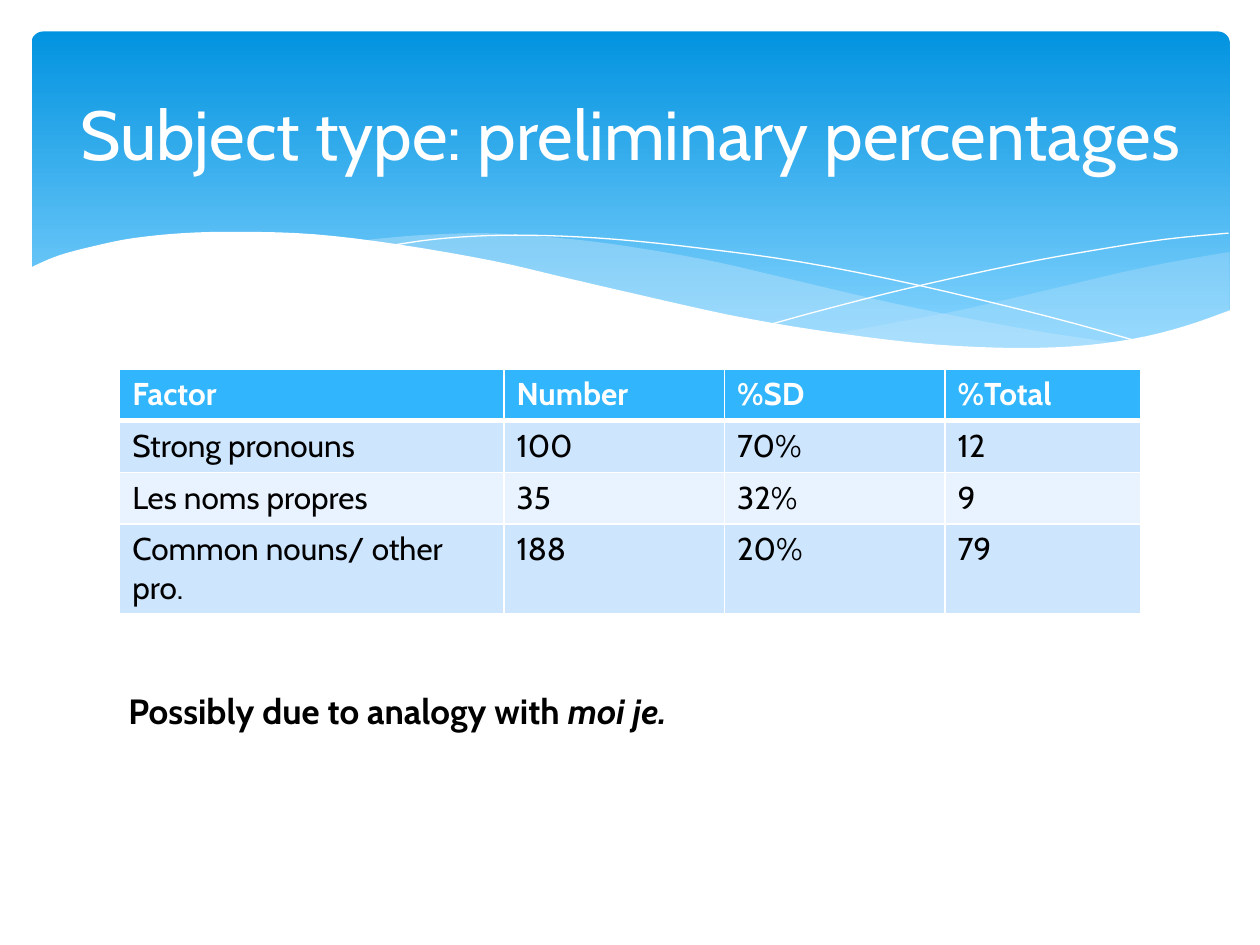
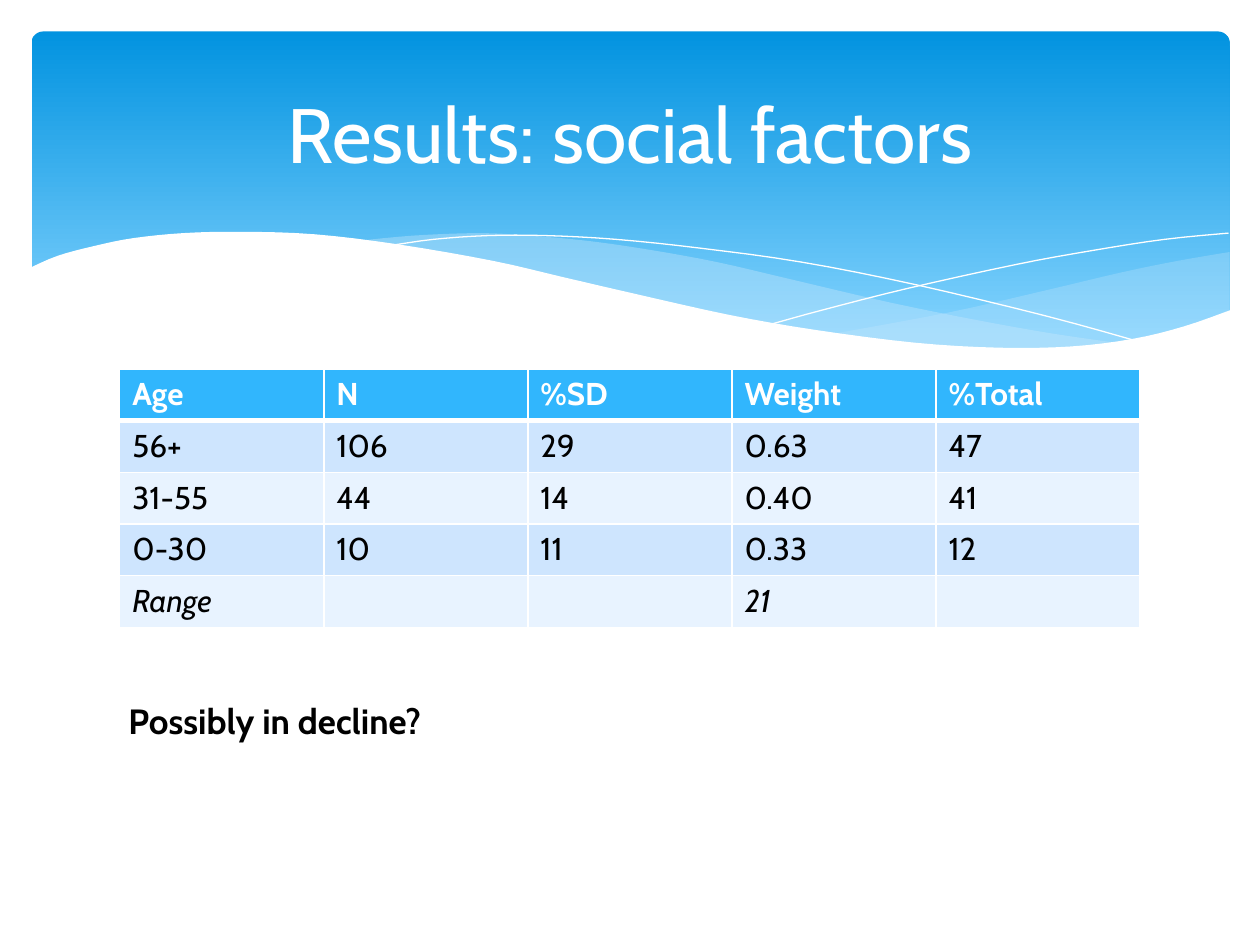
"""Build two result slides with a shared wave band, a title, a table and a remark."""

from dataclasses import dataclass

from lxml.etree import SubElement
from pptx import Presentation
from pptx.dml.color import RGBColor
from pptx.enum.shapes import MSO_SHAPE as Preset
from pptx.enum.text import MSO_ANCHOR as Anchor, MSO_AUTO_SIZE as AutoSize, PP_ALIGN as Align
from pptx.oxml.ns import qn
from pptx.util import Inches, Pt

Point = tuple[float, float]

COLORS = {
    "white": "FFFFFF",
    "black": "000000",
    "band_top": "0293E0",
    "band_bottom": "83D3FE",
    "wave": "C6E7FC",
    "header": "31B6FD",
    "odd_row": "CEE5FE",
    "even_row": "E8F3FF",
}
FONT = "Cabin"
HEADER_FORMAT = {"name": FONT, "size": Pt(18), "bold": True}
CELL_FORMAT = {"name": FONT, "size": Pt(18), "bold": False}
REMARK_FORMAT = {"name": FONT, "size": Pt(20), "bold": True}
TITLE_FRAME = {"word_wrap": True, "auto_size": AutoSize.NONE, "vertical_anchor": Anchor.MIDDLE}
REMARK_FRAME = {"word_wrap": True, "auto_size": AutoSize.SHAPE_TO_FIT_TEXT}
ROW_HEIGHT = 0.41
CURVE_STEPS = 4


@dataclass(frozen=True)
class Wave:
    """A filled or outlined figure joined from smooth curves."""
    curves: list[list[Point]]
    fill: str | None = None
    opacity: int = 100


@dataclass(frozen=True)
class Remark:
    """The sentence below a table, given as (text, italic) runs."""
    runs: list[tuple[str, bool]]
    top: float
    width: float


@dataclass(frozen=True)
class ResultSlide:
    """The content of one slide."""
    title: str
    title_size: float
    column_widths: list[float]
    rows: list[list[str]]
    remark: Remark
    italic_last_row: bool = False


WAVES = [
    Wave([[(9.76, 2), (9.35, 2.07), (8.91, 2.16), (8.32, 2.3), (7.53, 2.48), (6.61, 2.65)],
          [(6.61, 2.65), (7.05, 2.71), (7.57, 2.76), (8.03, 2.78), (8.54, 2.76),
           (8.97, 2.7), (9.35, 2.62), (9.76, 2.47)]], "wave", 29),
    Wave([[(8.93, 2.73), (8.37, 2.65), (7.75, 2.54), (7.06, 2.4), (6.29, 2.22), (5.69, 2.08),
           (5.14, 1.98), (4.65, 1.91), (4.2, 1.87), (3.8, 1.85), (3.28, 1.87), (2.86, 1.91)],
          [(2.86, 1.91), (3.42, 1.99), (4.04, 2.11), (4.91, 2.32), (5.66, 2.48), (6.34, 2.61),
           (6.95, 2.7), (7.48, 2.76), (8.07, 2.78), (8.57, 2.77), (8.93, 2.73)]], "wave", 40),
    Wave([[(3.09, 1.95), (3.44, 1.9), (3.87, 1.87), (4.33, 1.87), (4.89, 1.9), (5.56, 1.97),
           (6.36, 2.08), (7.27, 2.26), (8.31, 2.51), (9.07, 2.72)]]),
    Wave([[(6.13, 2.57), (6.53, 2.46), (7.2, 2.29), (8.06, 2.1), (8.66, 1.99),
           (9.24, 1.9), (9.75, 1.85)]]),
    Wave([[(0.23, 2.13), (0.46, 2.03), (0.76, 1.95), (1.06, 1.89), (1.46, 1.85), (1.93, 1.84),
           (2.5, 1.86), (3.16, 1.94), (3.91, 2.07), (4.47, 2.2), (5.03, 2.33), (5.79, 2.5),
           (6.48, 2.62), (7.26, 2.72), (7.93, 2.76), (8.5, 2.75), (8.99, 2.69), (9.4, 2.59),
           (9.77, 2.46)],
          [(9.77, 3.29), (0.23, 3.29)]], "white"),
]

SLIDES = [
    ResultSlide(
        "Subject type: preliminary percentages", 39.6, [3.05, 1.75, 1.75, 1.55],
        [["Factor", "Number", "%SD", "%Total"],
         ["Strong pronouns", "100", "70%", "12"],
         ["Les noms propres", "35", "32%", "9"],
         ["Common nouns/ other pro.", "188", "20%", "79"]],
        Remark([("Possibly due to analogy with ", False), ("moi je.", True)], 5.42, 8)),
    ResultSlide(
        "Results: social factors", 44, [1.62] * 5,
        [["Age", "N", "%SD", "Weight", "%Total"],
         ["56+", "106", "29", "0.63", "47"],
         ["31-55", "44", "14", "0.40", "41"],
         ["0-30", "10", "11", "0.33", "12"],
         ["Range", "", "", "21", ""]],
        Remark([("Possibly in decline?", False)], 5.5, 8.25), italic_last_row=True),
]


def rgb(name: str) -> RGBColor:
    """Return a named colour."""
    return RGBColor.from_string(COLORS[name])


def apply_format(target, values: dict) -> None:
    """Set every attribute in a dict of format values."""
    for name, value in values.items():
        setattr(target, name, value)


def add_run(paragraph, text: str, color: str, values: dict) -> None:
    """Add a formatted run to a paragraph."""
    run = paragraph.add_run()
    run.text = text
    apply_format(run.font, values)
    run.font.color.rgb = rgb(color)


def smooth(anchors: list[Point]) -> list[Point]:
    """Return points on a Catmull-Rom curve through the anchors."""
    if len(anchors) < 3:
        return anchors
    padded = [anchors[0], *anchors, anchors[-1]]
    points = [anchors[0]]
    for a, b, c, d in zip(padded, padded[1:], padded[2:], padded[3:]):
        for step in range(1, CURVE_STEPS + 1):
            t = step / CURVE_STEPS
            x, y = (
                (2 * q + (r - p) * t + (2 * p - 5 * q + 4 * r - s) * t ** 2
                 + (3 * q - p - 3 * r + s) * t ** 3) / 2
                for p, q, r, s in zip(a, b, c, d))
            points.append((x, y))
    return points


def add_band(shapes):
    """Draw the rounded gradient band behind the title."""
    band = shapes.add_shape(Preset.ROUNDED_RECTANGLE, Inches(0.25), Inches(0.25),
                            Inches(9.51), Inches(2.7))
    band.adjustments[0] = 0.034
    band.shadow.inherit = False
    band.line.fill.background()
    band.fill.gradient()
    band.fill.gradient_angle = 270
    stops = zip(band.fill.gradient_stops, ("band_top", "band_bottom"), (0, 0.9))
    for stop, color, position in stops:
        stop.color.rgb = rgb(color)
        stop.position = position
    return band


def add_wave(shapes, wave: Wave):
    """Draw one wave, as a translucent area or as a hairline."""
    points = [(Inches(x), Inches(y)) for curve in wave.curves for x, y in smooth(curve)]
    builder = shapes.build_freeform(*points[0])
    builder.add_line_segments(points[1:], close=wave.fill is not None)
    shape = builder.convert_to_shape()
    shape.shadow.inherit = False
    if wave.fill:
        shape.line.fill.background()
        shape.fill.solid()
        shape.fill.fore_color.rgb = rgb(wave.fill)
        color = shape.element.spPr.find(f"{qn('a:solidFill')}/{qn('a:srgbClr')}")
        SubElement(color, qn("a:alpha"), val=str(wave.opacity * 1000))
    else:
        shape.fill.background()
        shape.line.color.rgb = rgb("white")
        shape.line.width = Pt(0)
    return shape


def decorate_layout(layout, slide) -> None:
    """Draw the band and waves once and place them at the back of the layout."""
    for placeholder in list(layout.placeholders)[1:]:
        placeholder.element.getparent().remove(placeholder.element)
    decorations = [add_band(slide.shapes), *(add_wave(slide.shapes, wave) for wave in WAVES)]
    for index, shape in enumerate(decorations, start=2):
        layout.shapes.element.insert(index, shape.element)


def add_title(slide, text: str, size: float) -> None:
    """Place and format the title placeholder."""
    title = slide.shapes.title
    apply_format(title, {"left": Inches(0.5), "top": Inches(0.37),
                         "width": Inches(9), "height": Inches(1.37)})
    apply_format(title.text_frame, TITLE_FRAME)
    paragraph = title.text_frame.paragraphs[0]
    paragraph.alignment = Align.CENTER
    add_run(paragraph, text, "white", {"name": FONT, "size": Pt(size)})


def set_borders(cell, row_index: int) -> None:
    """Give a cell white borders, with a thick rule under the header."""
    widths = {"L": 1, "R": 1, "T": 3 if row_index == 1 else 1, "B": 3 if row_index == 0 else 1}
    properties = cell._tc.get_or_add_tcPr()
    for side, width in widths.items():
        line = SubElement(properties, qn(f"a:ln{side}"), w=str(Pt(width)))
        fill = SubElement(line, qn("a:solidFill"))
        SubElement(fill, qn("a:srgbClr"), val=COLORS["white"])


def add_result_table(slide, content: ResultSlide) -> None:
    """Draw the table with its header and alternating rows."""
    rows, widths = content.rows, content.column_widths
    table = slide.shapes.add_table(
        len(rows), len(widths), Inches(0.95), Inches(2.93),
        Inches(sum(widths)), Inches(ROW_HEIGHT * len(rows))).table
    for column, width in zip(table.columns, widths):
        column.width = Inches(width)
    for row_index, texts in enumerate(rows):
        table.rows[row_index].height = Inches(ROW_HEIGHT)
        is_header = row_index == 0
        fill = "header" if is_header else "odd_row" if row_index % 2 else "even_row"
        values = dict(HEADER_FORMAT if is_header else CELL_FORMAT)
        values["italic"] = content.italic_last_row and row_index == len(rows) - 1
        for column_index, text in enumerate(texts):
            cell = table.cell(row_index, column_index)
            set_borders(cell, row_index)
            cell.fill.solid()
            cell.fill.fore_color.rgb = rgb(fill)
            if text:
                add_run(cell.text_frame.paragraphs[0], text,
                        "white" if is_header else "black", values)


def add_remark(slide, remark: Remark) -> None:
    """Write the bold sentence below the table."""
    box = slide.shapes.add_textbox(Inches(0.92), Inches(remark.top),
                                   Inches(remark.width), Inches(0.44))
    apply_format(box.text_frame, REMARK_FRAME)
    for text, italic in remark.runs:
        add_run(box.text_frame.paragraphs[0], text, "black", REMARK_FORMAT | {"italic": italic})


def main() -> None:
    """Build and save the presentation."""
    presentation = Presentation()
    presentation.slide_width = Inches(10)
    presentation.slide_height = Inches(7.5)
    layout = presentation.slide_layouts[5]
    for index, content in enumerate(SLIDES):
        slide = presentation.slides.add_slide(layout)
        if index == 0:
            decorate_layout(layout, slide)
        add_title(slide, content.title, content.title_size)
        add_result_table(slide, content)
        add_remark(slide, content.remark)
    presentation.save("out.pptx")


if __name__ == "__main__":
    main()
